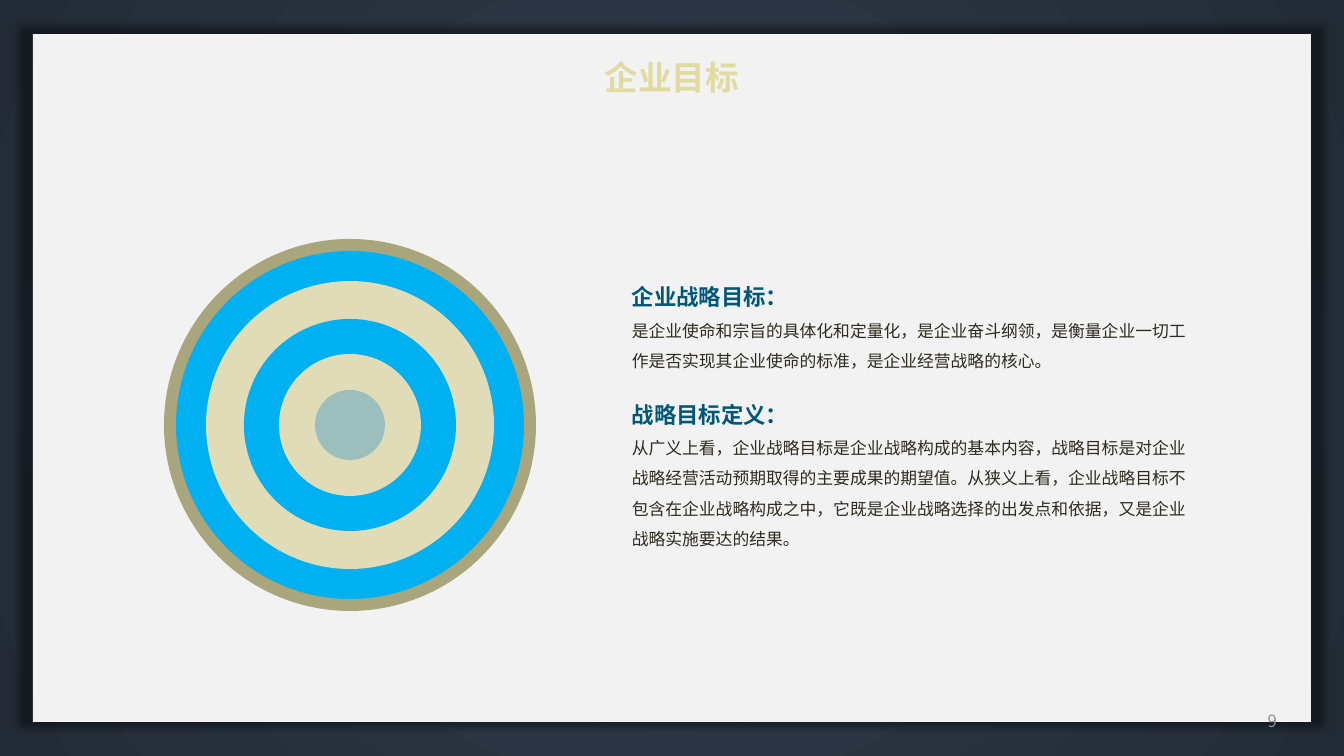
"""Build the slide on business goals: a target beside two definitions."""
from pptx import Presentation
from pptx.dml.color import RGBColor
from pptx.enum.shapes import MSO_SHAPE as Shape
from pptx.enum.text import MSO_ANCHOR as Anchor, MSO_AUTO_SIZE as Fit, PP_ALIGN as Align
from pptx.oxml import parse_xml
from pptx.oxml.ns import nsdecls, qn
from pptx.util import Pt
from lxml.etree import SubElement

FONT = "Noto Sans CJK SC"
PX = 12192000 / 1344
WIDE, HIGH = 1344, 756

SLATE = RGBColor(0x33, 0x3F, 0x50)
NIGHT = RGBColor(0x22, 0x2A, 0x35)
PAPER = RGBColor(0xF2, 0xF2, 0xF2)
SAND = RGBColor(0xE1, 0xDB, 0xA0)
GREY = RGBColor(0x8F, 0x8F, 0x8D)
OLIVE = RGBColor(0xA9, 0xA5, 0x7C)
BLUE = RGBColor(0x00, 0xB0, 0xF0)
CREAM = RGBColor(0xDF, 0xDC, 0xB7)
TEAL = RGBColor(0x9C, 0xBE, 0xBD)
NAVY = RGBColor(0x00, 0x58, 0x78)
INK = RGBColor(0x2F, 0x2B, 0x20)

TITLE = "企业目标"
NUMBER = "9"
TERMS = [
    ("企业战略目标：",
     "是企业使命和宗旨的具体化和定量化，是企业奋斗纲领，是衡量企业一切工作是否实现其企业使命的标准，"
     "是企业经营战略的核心。"),
    ("战略目标定义：",
     "从广义上看，企业战略目标是企业战略构成的基本内容，战略目标是对企业战略经营活动预期取得的主要成果的期望值。"
     "从狭义上看，企业战略目标不包含在企业战略构成之中，它既是企业战略选择的出发点和依据，"
     "又是企业战略实施要达的结果。"),
]
CENTER = (350, 425)
RINGS = [(372, OLIVE), (348, BLUE), (288, CREAM), (212, BLUE), (142, CREAM), (70, TEAL)]

SHADOW = (
    f'<a:effectLst {nsdecls("a")}><a:outerShdw blurRad="63500" sx="102000" sy="102000" '
    'algn="ctr" rotWithShape="0"><a:srgbClr val="000000"><a:alpha val="40000"/>'
    '</a:srgbClr></a:outerShdw></a:effectLst>')
GLOW = (
    f'<a:path {nsdecls("a")} path="circle">'
    '<a:fillToRect l="50000" t="50000" r="50000" b="50000"/></a:path>')


def emu(*sizes):
    """Turn px lengths into EMU."""
    return [round(size * PX) for size in sizes]


def write(frame, text, size=12, color=INK, bold=False, align=Align.LEFT, line=None, after=0):
    """Add one formatted paragraph to a text frame."""
    para = frame.paragraphs[0] if not frame.text else frame.add_paragraph()
    para.alignment = align
    para.line_spacing = line
    para.space_after = Pt(after)
    run = para.add_run()
    run.text = text
    font = run.font
    font.size, font.bold, font.name = Pt(size), bold, FONT
    font.color.rgb = color
    SubElement(run._r.get_or_add_rPr(), qn("a:ea")).set("typeface", FONT)


def draw(shapes, kind, box, color):
    """Add a plain filled shape."""
    shape = shapes.add_shape(kind, *emu(*box))
    shape.fill.solid()
    shape.fill.fore_color.rgb = color
    shape.line.fill.background()
    shape.shadow.inherit = False
    return shape


def paint(slide):
    """Fill the background with a round gradient."""
    fill = slide.background.fill
    fill.gradient()
    for stop, color in zip(fill.gradient_stops, (SLATE, NIGHT)):
        stop.color.rgb = color
    grad = slide.element.find(".//" + qn("a:gradFill"))
    grad.replace(grad.find(qn("a:lin")), parse_xml(GLOW))


def main():
    """Build and save the deck."""
    deck = Presentation()
    deck.slide_width, deck.slide_height = emu(WIDE, HIGH)
    slide = deck.slides.add_slide(deck.slide_layouts[5])
    shapes = slide.shapes
    paint(slide)

    panel = draw(shapes, Shape.RECTANGLE, (33, 34, 1278, 688), PAPER)
    props = panel.element.spPr
    props.replace(props.find(qn("a:effectLst")), parse_xml(SHADOW))

    title = shapes.title
    title.left, title.top, title.width, title.height = emu(92, 44, 1160, 66)
    title.text_frame.vertical_anchor = Anchor.MIDDLE
    write(title.text_frame, TITLE, size=24, color=SAND, bold=True, align=Align.CENTER)
    panel.element.addnext(title.element)

    page = shapes.add_textbox(*emu(1235, 701, 52, 40)).text_frame
    page.vertical_anchor = Anchor.MIDDLE
    write(page, NUMBER, color=GREY, align=Align.RIGHT)

    target = shapes.add_group_shape()
    for size, color in RINGS:
        left, top = (mid - size / 2 for mid in CENTER)
        draw(target.shapes, Shape.OVAL, (left, top, size, size), color)

    body = shapes.add_textbox(*emu(622, 265, 586, 291)).text_frame
    body.word_wrap = True
    body.auto_size = Fit.SHAPE_TO_FIT_TEXT
    for head, text in TERMS:
        write(body, head, size=16, color=NAVY, bold=True, line=1.5)
        write(body, text, line=1.5, after=12)

    deck.save("out.pptx")


if __name__ == "__main__":
    main()
